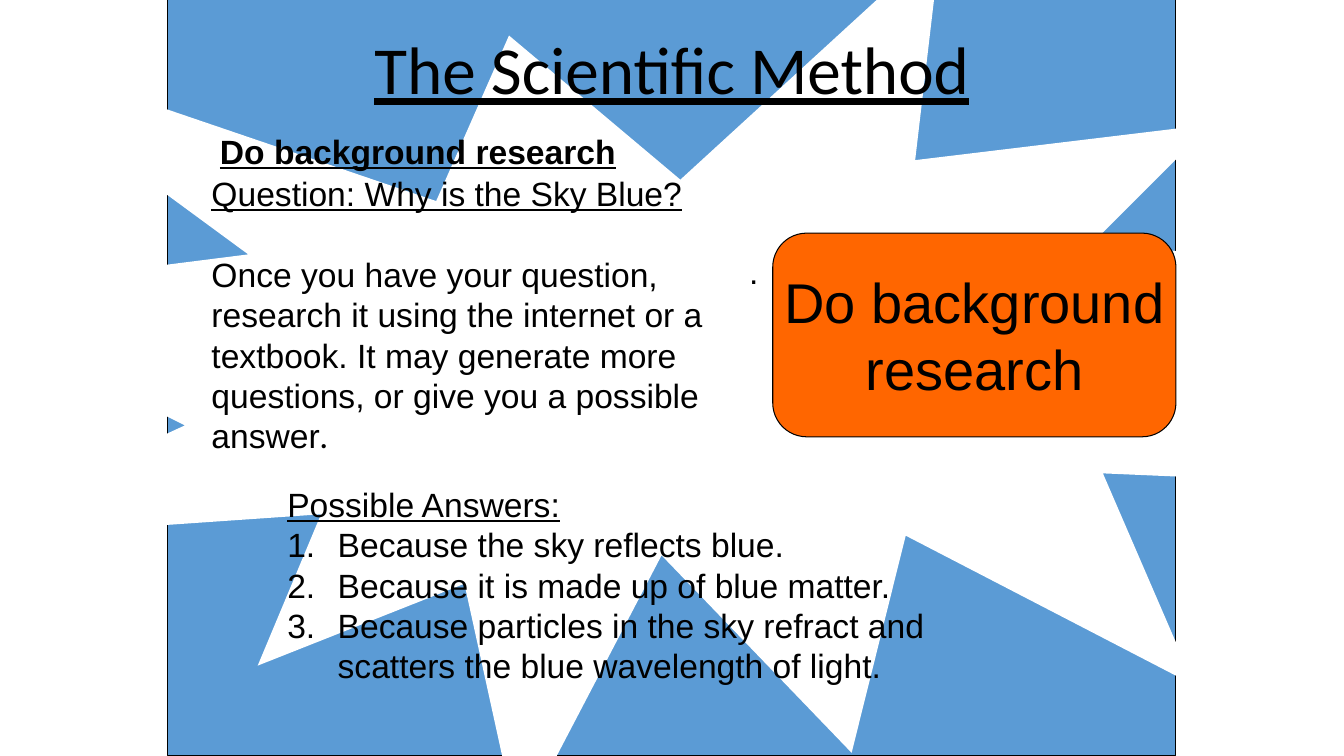
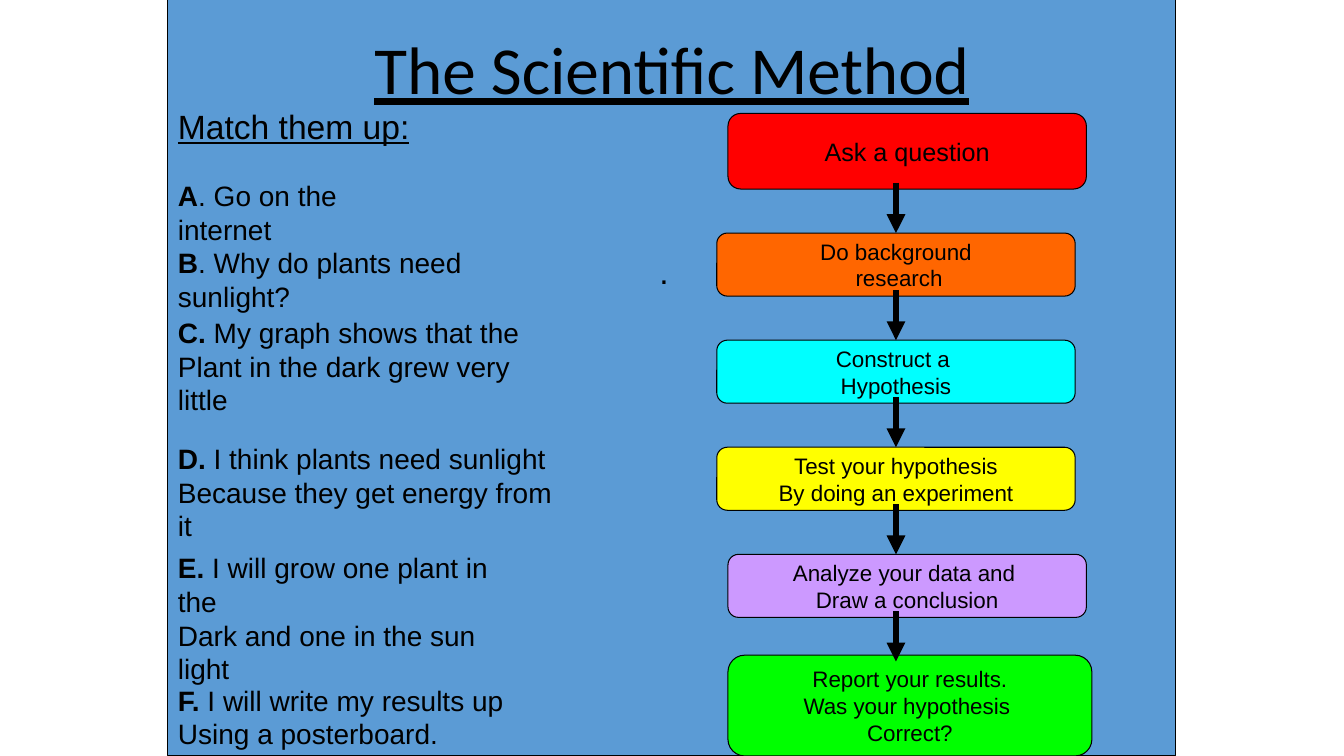
"""Build two slides on the scientific method."""
from lxml.etree import SubElement
from pptx import Presentation
from pptx.dml.color import RGBColor
from pptx.enum.shapes import MSO_CONNECTOR, MSO_SHAPE
from pptx.enum.text import MSO_ANCHOR, MSO_AUTO_SIZE, PP_ALIGN
from pptx.oxml.ns import qn
from pptx.util import Pt

BLACK, WHITE, BLUE, ORANGE = "000000", "FFFFFF", "5B9BD5", "FF6600"
BOLD, UNDER = {"bold": True}, {"underline": True}
TITLE = {"size": Pt(48), "name": "Calibri", "underline": True}


def write(sp, paras, size, align=PP_ALIGN.LEFT, wrap=True):
    """Fill a shape with paragraphs, each a list of (text, format) runs."""
    tf = sp.text_frame
    tf.word_wrap = wrap
    tf.auto_size = MSO_AUTO_SIZE.NONE
    for i, runs in enumerate(paras):
        p = tf.paragraphs[0] if i == 0 else tf.add_paragraph()
        p.alignment = align
        p.space_before = Pt(0)
        for text, fmt in runs:
            r = p.add_run()
            r.text = text
            r.font.color.rgb = RGBColor.from_string(BLACK)
            for key, value in {"name": "Arial", "size": Pt(size), **fmt}.items():
                setattr(r.font, key, value)
    return tf


def block(s, kind, at, fill, line=BLACK):
    """Add a filled preset shape, with a thin outline unless line is None."""
    sp = s.shapes.add_shape(kind, *map(Pt, at))
    sp.shadow.inherit = False
    sp.fill.solid()
    sp.fill.fore_color.rgb = RGBColor.from_string(fill)
    if line:
        sp.line.color.rgb = RGBColor.from_string(line)
        sp.line.width = Pt(0.75)
    else:
        sp.line.fill.background()
    return sp


prs = Presentation()
prs.slide_width, prs.slide_height = Pt(960), Pt(540)
research = prs.slides.add_slide(prs.slide_layouts[1])
match = prs.slides.add_slide(prs.slide_layouts[5])

panel = block(research, MSO_SHAPE.RECTANGLE, (120, 0, 720, 540), BLUE)
prs.slide_master.shapes._spTree.insert(2, panel._element)
burst = block(research, MSO_SHAPE.EXPLOSION1, (-54, -42, 1080, 634.5), WHITE, None)
research.shapes._spTree.insert(2, burst._element)

for s, dot_left in ((research, 528), (match, 464)):
    title = s.shapes.title
    title.left, title.top, title.width, title.height = map(Pt, (120, 22.5, 720, 72))
    tf = write(title, [[("The Scientific Method", TITLE)]], 48, PP_ALIGN.CENTER)
    tf.vertical_anchor = MSO_ANCHOR.TOP
    tf.paragraphs[0].line_spacing = 0.9
    dot = s.shapes.add_textbox(*map(Pt, (dot_left, 175.5, 304, 36)))
    write(dot, [[(".", {})]], 24)

sp = block(research, MSO_SHAPE.FLOWCHART_ALTERNATE_PROCESS, (552, 166.5, 288, 145.5), ORANGE)
write(sp, [[("Do background", {})], [("research", {})]], 40, PP_ALIGN.CENTER, False)

sp = research.shapes.add_textbox(*map(Pt, (150, 90, 300, 36)))
write(sp, [[("Do background research", {**BOLD, **UNDER})]], 24)

sp = research.shapes.add_textbox(*map(Pt, (144, 120, 424, 211)))
tf = write(sp, [
    [("Question: Why is the Sky Blue?", UNDER)],
    [("Once you have your question, research it using the internet or a textbook. "
      "It may generate more questions, or give you a possible answer", {}),
     (".", {"name": "Lato"})],
], 24)
tf.paragraphs[1].space_before = Pt(29)

answers = research.placeholders[1]
answers.left, answers.top, answers.width, answers.height = map(Pt, (198, 342, 516, 153))
tf = write(answers, [
    [("Possible Answers:", UNDER)],
    [("Because the sky reflects blue.", {})],
    [("Because it is made up of blue matter.", {})],
    [("Because particles in the sky refract and scatters the blue wavelength of light.", {})],
], 24)
for i, p in enumerate(tf.paragraphs):
    pPr = p._p.get_or_add_pPr()
    pPr.set("marL", str(Pt(36)))
    pPr.set("indent", str(-Pt(36)))
    if i == 0:
        SubElement(pPr, qn("a:buNone"))
    else:
        SubElement(pPr, qn("a:buFont"), typeface="Arial")
        SubElement(pPr, qn("a:buAutoNum"), type="arabicPeriod")

FIRST, PITCH = 166.5, 76.5
steps = [
    (520, 81, 256, 54, "FF0000", 18, ["Ask a question"]),
    (512, FIRST, 256, 45, ORANGE, 16, ["Do background", " research"]),
    (512, FIRST + PITCH, 256, 45, "00FFFF", 16, ["Construct a ", "Hypothesis"]),
    (512, FIRST + 2 * PITCH, 256, 45, "FFFF00", 16,
     ["Test your hypothesis", "By doing an experiment"]),
    (520, FIRST + 3 * PITCH, 256, 45, "CC99FF", 16,
     ["Analyze your data and ", "Draw a conclusion"]),
    (520, 468, 260, 72, "00FF00", 16,
     ["Report your results.", "Was your hypothesis ", "Correct?"]),
]
for *at, fill, size, lines in steps:
    sp = block(match, MSO_SHAPE.FLOWCHART_ALTERNATE_PROCESS, at, fill)
    write(sp, [[(line, {})] for line in lines], size, PP_ALIGN.CENTER, False)

for i in range(len(steps) - 1):
    tip = FIRST + i * PITCH
    arrow = match.shapes.add_connector(
        MSO_CONNECTOR.STRAIGHT, *map(Pt, (640, tip - 36, 640, tip)))
    arrow.line.color.rgb = RGBColor.from_string(BLACK)
    arrow.line.width = Pt(4.5)
    SubElement(arrow.line._get_or_add_ln(), qn("a:tailEnd"), type="triangle")
    SubElement(arrow._element.spPr, qn("a:effectLst"))

sp = match.shapes.add_textbox(*map(Pt, (120, 72, 254, 36)))
write(sp, [[("Match them up:", UNDER)]], 24)

choices = [
    (124, 198, "A", [". Go on the internet"]),
    (172, 301, "B", [". Why do plants need sunlight?"]),
    (222, 338, "C.", [" My graph shows that the", "Plant in the dark grew very", "little"]),
    (312, 294, "D.", [" I think plants need sunlight", "Because they get energy from it"]),
    (390, 268, "E.", [" I will grow one plant in the", "Dark and one in the sun light"]),
    (484.5, 260, "F.", [" I will write my results up", "Using a posterboard."]),
]
for top, width, letter, (first, *rest) in choices:
    sp = match.shapes.add_textbox(*map(Pt, (120, top, width, 55)))
    write(sp, [[(letter, BOLD), (first, {})]] + [[(line, {})] for line in rest], 20)

prs.save("out.pptx")
